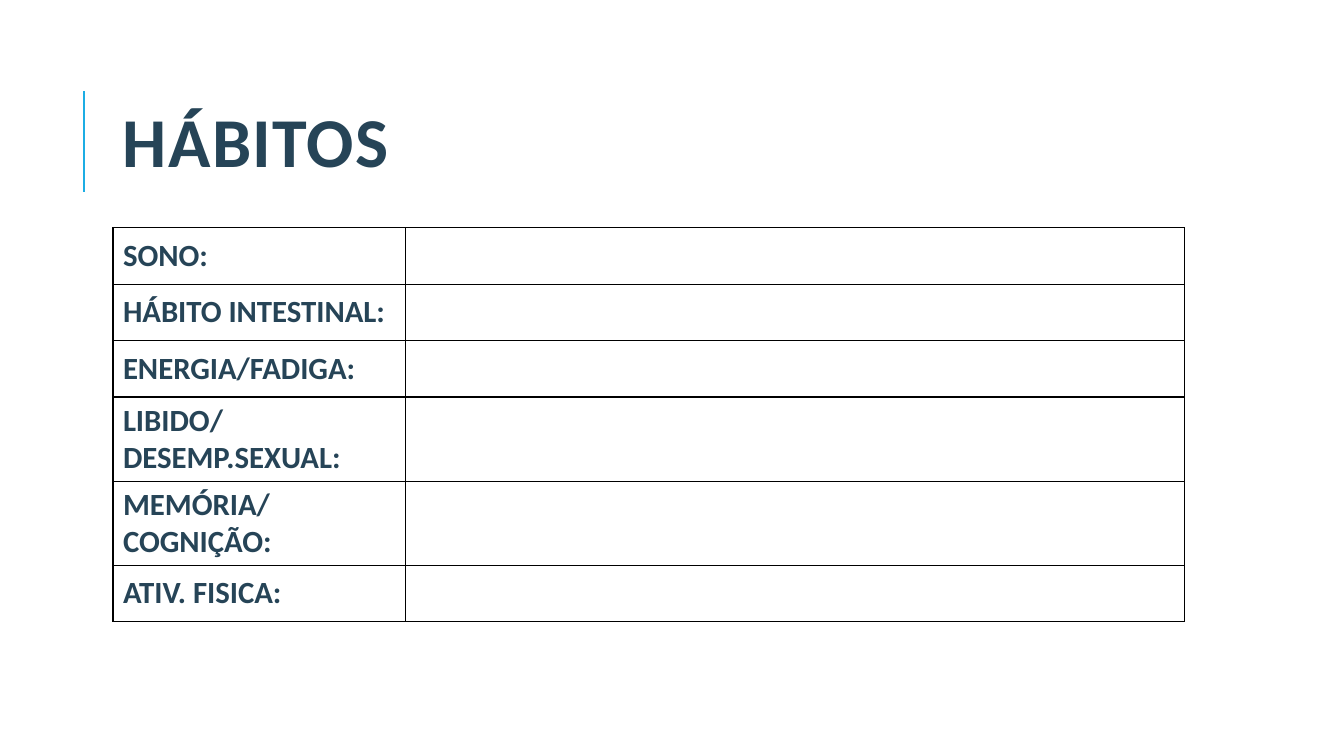
from lxml.etree import SubElement
from pptx import Presentation
from pptx.dml.color import RGBColor
from pptx.enum.shapes import MSO_CONNECTOR
from pptx.enum.text import MSO_ANCHOR
from pptx.oxml.ns import qn
from pptx.util import Inches, Pt

# Content
TITLE = "HÁBITOS"
HABITS = [
    "SONO:",
    "HÁBITO INTESTINAL:",
    "ENERGIA/FADIGA:",
    "LIBIDO/DESEMP.SEXUAL:",
    "MEMÓRIA/COGNIÇÃO:",
    "ATIV. FISICA:",
]
COLORS = {"text": "264457", "accent": "1CADE4", "border": "000000"}
FONT = "Calibri"

# Layout
LEFT, WIDTH = 1.12, 10.63
TABLE_TOP, ROW_HEIGHT = 2.26, 0.56
LABEL_WIDTH = 2.9
BORDER_WIDTH = 0.97


def write(frame, text, size, spacing=None, line_spacing=None):
    """Put one bold line of text in a frame."""
    frame.word_wrap = True
    frame.vertical_anchor = MSO_ANCHOR.MIDDLE
    paragraph = frame.paragraphs[0]
    if line_spacing:
        paragraph.line_spacing = line_spacing
    run = paragraph.add_run()
    run.text = text
    run.font.name = FONT
    run.font.size = Pt(size)
    run.font.bold = True
    run.font.color.rgb = RGBColor.from_string(COLORS["text"])
    if spacing:
        run.font._element.set("spc", str(spacing * 100))


def set_borders(cell):
    """Draw all four borders; they come before the fill in the cell properties."""
    properties = cell._tc.get_or_add_tcPr()
    for side in ("a:lnL", "a:lnR", "a:lnT", "a:lnB"):
        border = SubElement(properties, qn(side), w=str(Pt(BORDER_WIDTH)))
        fill = SubElement(border, qn("a:solidFill"))
        SubElement(fill, qn("a:srgbClr"), val=COLORS["border"])


def main():
    deck = Presentation()
    deck.slide_width, deck.slide_height = Inches(13.33), Inches(7.5)
    slide = deck.slides.add_slide(deck.slide_layouts[6])

    # Accent line beside the title
    accent = slide.shapes.add_connector(
        MSO_CONNECTOR.STRAIGHT, Inches(0.83), Inches(1.9), Inches(0.83), Inches(0.9))
    accent.line.color.rgb = RGBColor.from_string(COLORS["accent"])
    accent.line.width = Pt(1.5)
    SubElement(accent._element.spPr, qn("a:effectLst"))

    # Title
    title = slide.shapes.add_textbox(
        Inches(LEFT), Inches(0.64), Inches(WIDTH), Inches(1.64))
    write(title.text_frame, TITLE, 50, spacing=1, line_spacing=0.8)

    # Habit table: labels on the left, room for answers on the right
    habits = slide.shapes.add_table(
        len(HABITS), 2, Inches(LEFT), Inches(TABLE_TOP),
        Inches(WIDTH), Inches(ROW_HEIGHT * len(HABITS))).table
    habits.first_row = habits.horz_banding = False
    habits.columns[0].width = Inches(LABEL_WIDTH)
    habits.columns[1].width = Inches(WIDTH - LABEL_WIDTH)
    for row, habit in enumerate(HABITS):
        habits.rows[row].height = Inches(ROW_HEIGHT)
        label = habits.cell(row, 0)
        write(label.text_frame, habit, 22)
        label.vertical_anchor = MSO_ANCHOR.MIDDLE
    for cell in habits.iter_cells():
        set_borders(cell)
        cell.fill.background()

    deck.save("out.pptx")


if __name__ == "__main__":
    main()
